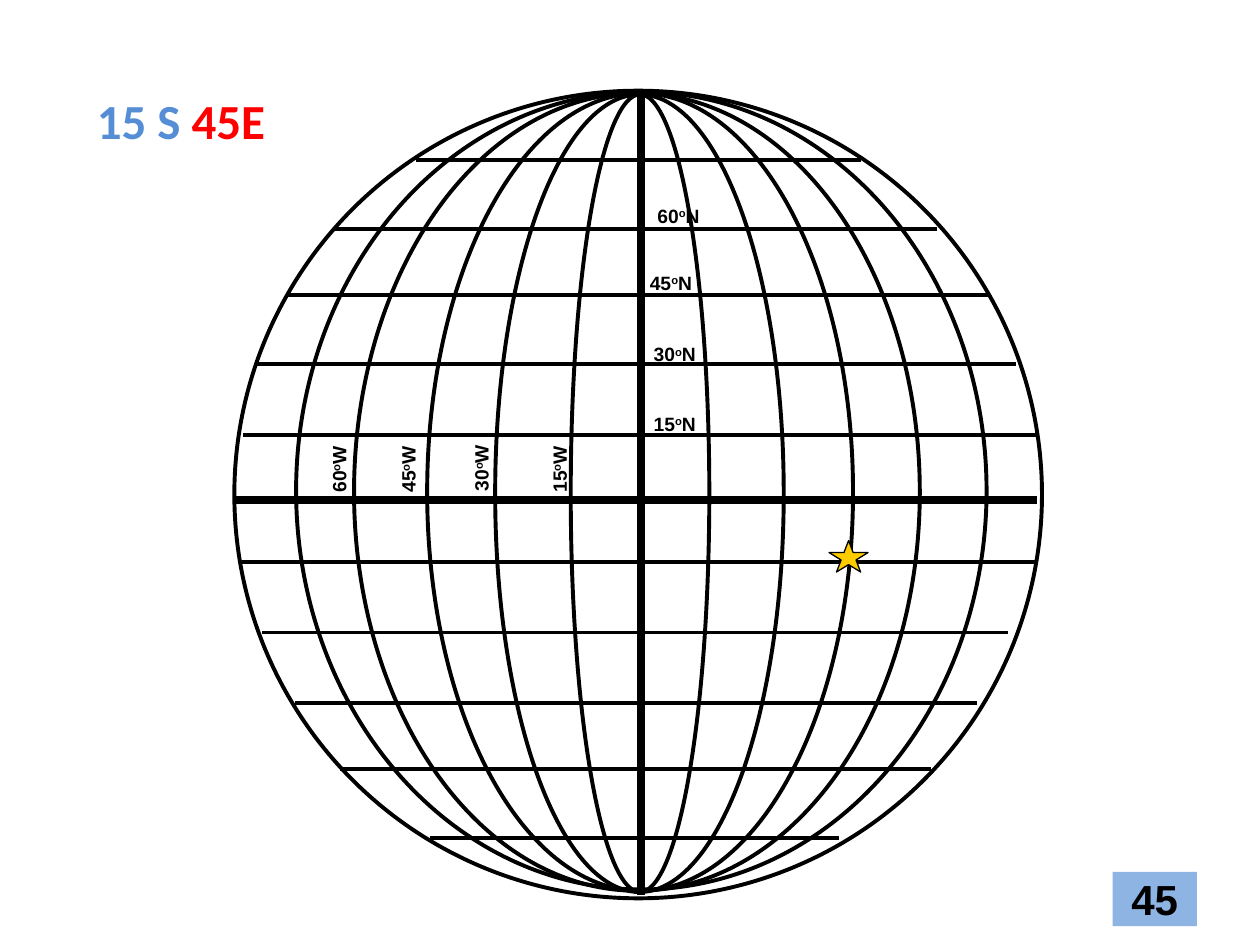
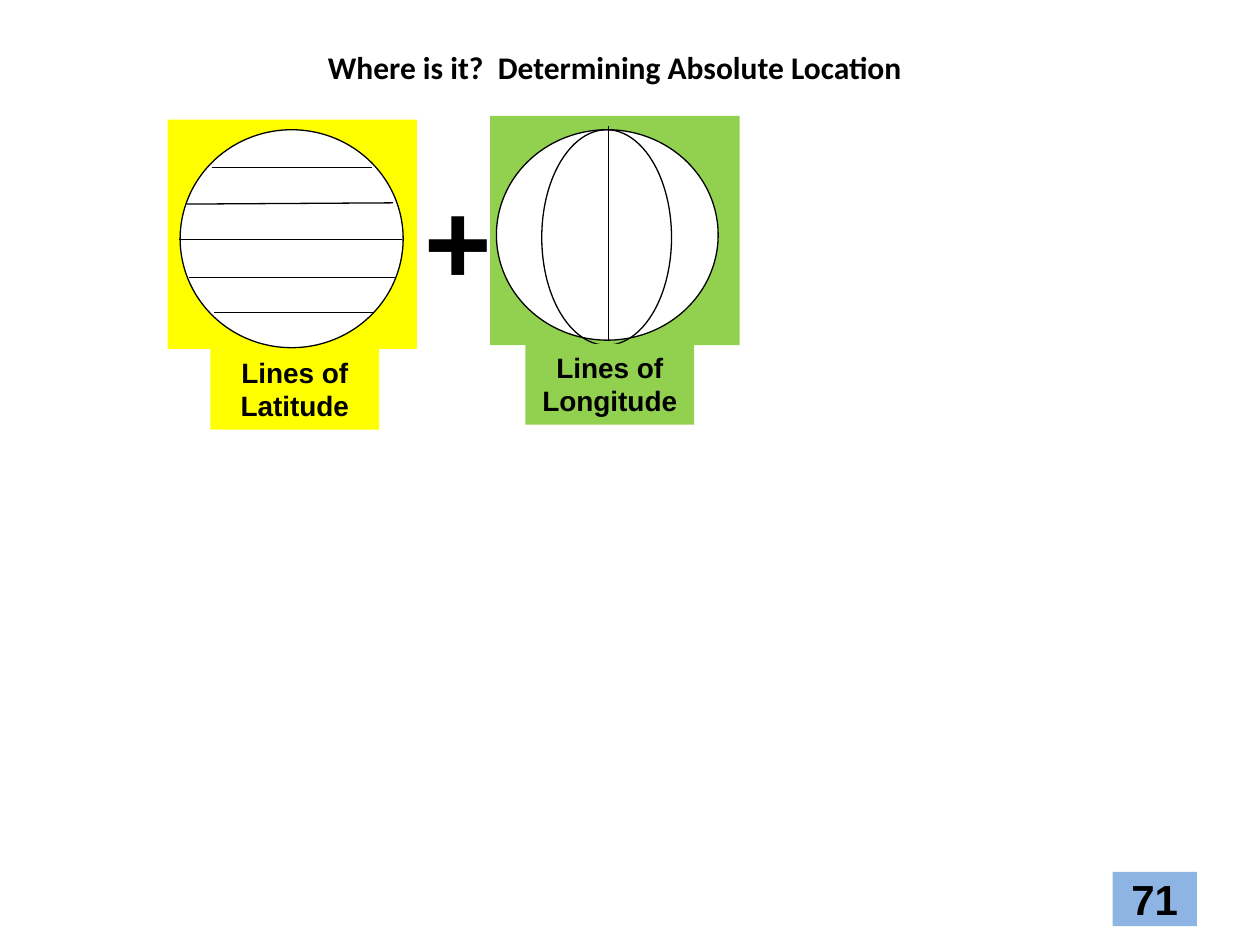
import pptx
import pptx.util
import pptx.dml.color
import pptx.enum.shapes
import pptx.enum.text
import pptx.oxml.ns
import lxml.etree

Inches = pptx.util.Inches
Pt = pptx.util.Pt
SHAPE = pptx.enum.shapes.MSO_SHAPE
ALIGN = pptx.enum.text.PP_ALIGN
ANCHOR = pptx.enum.text.MSO_ANCHOR

COLORS = {
    "black": "000000",
    "white": "FFFFFF",
    "badge": "8EB4E3",
    "south": "558ED5",
    "east": "FF0000",
    "star": "FFCC00",
    "latitude": "FFFF00",
    "longitude": "92D050",
}


def color(name):
    return pptx.dml.color.RGBColor.from_string(COLORS[name])


class SlideBuilder:
    def __init__(self, deck):
        self.deck = deck
        self.slide = None

    def new_slide(self):
        self.slide = self.deck.slides.add_slide(self.deck.slide_layouts[6])

    def shape(self, kind, left, top, width, height, fill=None, weight=None):
        shape = self.slide.shapes.add_shape(
            kind, Inches(left), Inches(top), Inches(width), Inches(height))
        shape.shadow.inherit = False
        if fill:
            shape.fill.solid()
            shape.fill.fore_color.rgb = color(fill)
        else:
            shape.fill.background()
        if weight:
            shape.line.color.rgb = color("black")
            shape.line.width = Pt(weight)
        else:
            shape.line.fill.background()
        return shape

    def line(self, x1, y1, x2, y2, weight):
        line = self.slide.shapes.add_connector(
            pptx.enum.shapes.MSO_CONNECTOR.STRAIGHT,
            Inches(x1), Inches(y1), Inches(x2), Inches(y2))
        line.line.color.rgb = color("black")
        line.line.width = Pt(weight)
        lxml.etree.SubElement(line._element.spPr, pptx.oxml.ns.qn("a:effectLst"))

    def fill_text(self, box, spans, size, font="Arial", align=ALIGN.CENTER,
                  anchor=ANCHOR.TOP, after=0):
        frame = box.text_frame
        frame.word_wrap = True
        frame.vertical_anchor = anchor
        para = frame.paragraphs[0]
        para.alignment = align
        para.space_after = Pt(after)
        para.font.name = font
        para.font.size = Pt(size)
        para.font.bold = True
        for text, fill in spans:
            span = para.add_run()
            span.text = text
            span.font.color.rgb = color(fill)

    def text(self, left, top, width, height, spans, size, **style):
        box = self.slide.shapes.add_textbox(
            Inches(left), Inches(top), Inches(width), Inches(height))
        self.fill_text(box, spans, size, **style)
        return box

    def degree_label(self, left, top, width, degrees, direction, rotation=0):
        spans = [(part, "black") for part in (str(degrees), "o", direction)]
        box = self.text(left, top, width, 0.25, spans, 11, after=10)
        box.rotation = rotation
        frame = box.text_frame
        frame.margin_left = frame.margin_right = Inches(0.04)
        frame.margin_top = frame.margin_bottom = Inches(0.04)
        frame.paragraphs[0].runs[1].font._element.set("baseline", "30000")

    def caption(self, left, top, text, fill):
        box = self.shape(SHAPE.RECTANGLE, left, top, 1.34, 0.64, fill)
        self.fill_text(box, [(text, "black")], 16, after=10)

    def page_badge(self, number):
        badge = self.shape(SHAPE.RECTANGLE, 8.83, 6.92, 0.67, 0.43, "badge")
        self.fill_text(badge, [(str(number), "black")], 24, anchor=ANCHOR.MIDDLE)


def build_globe(page):
    page.new_slide()
    page.line(5.09, 0.72, 5.09, 7.1, 4.5)
    page.line(1.85, 3.97, 8.23, 3.97, 4.5)
    page.shape(SHAPE.OVAL, 1.86, 0.72, 6.41, 6.41, weight=2.25)
    parallels = [
        (1.27, 3.3, 6.83), (1.82, 2.66, 7.44), (2.34, 2.27, 7.84),
        (2.89, 2.04, 8.06), (3.45, 1.93, 8.23), (4.46, 1.92, 8.22),
        (5.02, 2.08, 8), (5.58, 2.34, 7.75), (6.1, 2.7, 7.39),
        (6.65, 3.41, 6.66),
    ]
    for y, west, east in parallels:
        page.line(west, y, east, y, 2.25)
    meridians = [(4.53, 0.75, 1.1), (3.93, 0.75, 2.29), (3.39, 0.74, 3.38),
                 (2.81, 0.74, 4.49), (2.35, 0.73, 5.48)]
    for left, top, width in meridians:
        page.shape(SHAPE.OVAL, left, top, width, 6.33, weight=2.25)
    north_labels = [(5.04, 3.23), (5.04, 2.68), (5.01, 2.11), (5.07, 1.58)]
    west_labels = [(4.12, 3.6), (3.5, 3.59), (2.92, 3.6), (2.37, 3.6)]
    for step, (left, top) in enumerate(north_labels, 1):
        page.degree_label(left, top, 0.63, 15 * step, "N")
    for step, (left, top) in enumerate(west_labels, 1):
        page.degree_label(left, top, 0.62, 15 * step, "W", 270)
    page.shape(SHAPE.STAR_5_POINT, 6.58, 4.29, 0.31, 0.25, "star", 0.75)
    page.text(0.67, 0.67, 2.08, 0.57, [("15 S ", "south"), ("45E", "east")],
              28, font="Calibri", align=ALIGN.LEFT)
    page.page_badge(45)


def build_absolute_location(page):
    page.new_slide()
    page.page_badge(71)
    page.text(2.97, 1.29, 1.34, 1.14, [("+", "black")], 66)

    page.shape(SHAPE.RECTANGLE, 1.33, 0.95, 1.98, 1.82, "latitude")
    page.shape(SHAPE.OVAL, 1.43, 1.03, 1.77, 1.73, "white", 0.75)
    latitudes = [(1.68, 1.33, 2.95, 1.33), (1.48, 1.62, 3.12, 1.61),
                 (1.42, 1.9, 3.19, 1.9), (1.5, 2.2, 3.14, 2.2),
                 (1.7, 2.48, 2.97, 2.48)]
    for ends in latitudes:
        page.line(*ends, 0.75)
    page.caption(1.67, 2.77, "Lines of Latitude", "latitude")

    page.shape(SHAPE.RECTANGLE, 3.89, 0.92, 1.98, 1.82, "longitude")
    page.shape(SHAPE.OVAL, 3.94, 1.03, 1.76, 1.67, "white", 0.75)
    page.line(4.83, 2.71, 4.83, 1.0, 0.75)
    page.shape(SHAPE.OVAL, 4.3, 1.03, 1.03, 1.71, weight=0.75)
    page.caption(4.17, 2.73, "Lines of Longitude", "longitude")

    page.text(1.92, 0.33, 5.92, 0.4,
              [("Where is it?  Determining Absolute Location", "black")],
              18, font="Calibri")


def main():
    deck = pptx.Presentation()
    deck.slide_width = Inches(10)
    deck.slide_height = Inches(7.5)
    page = SlideBuilder(deck)
    build_globe(page)
    build_absolute_location(page)
    deck.save("out.pptx")


if __name__ == "__main__":
    main()
